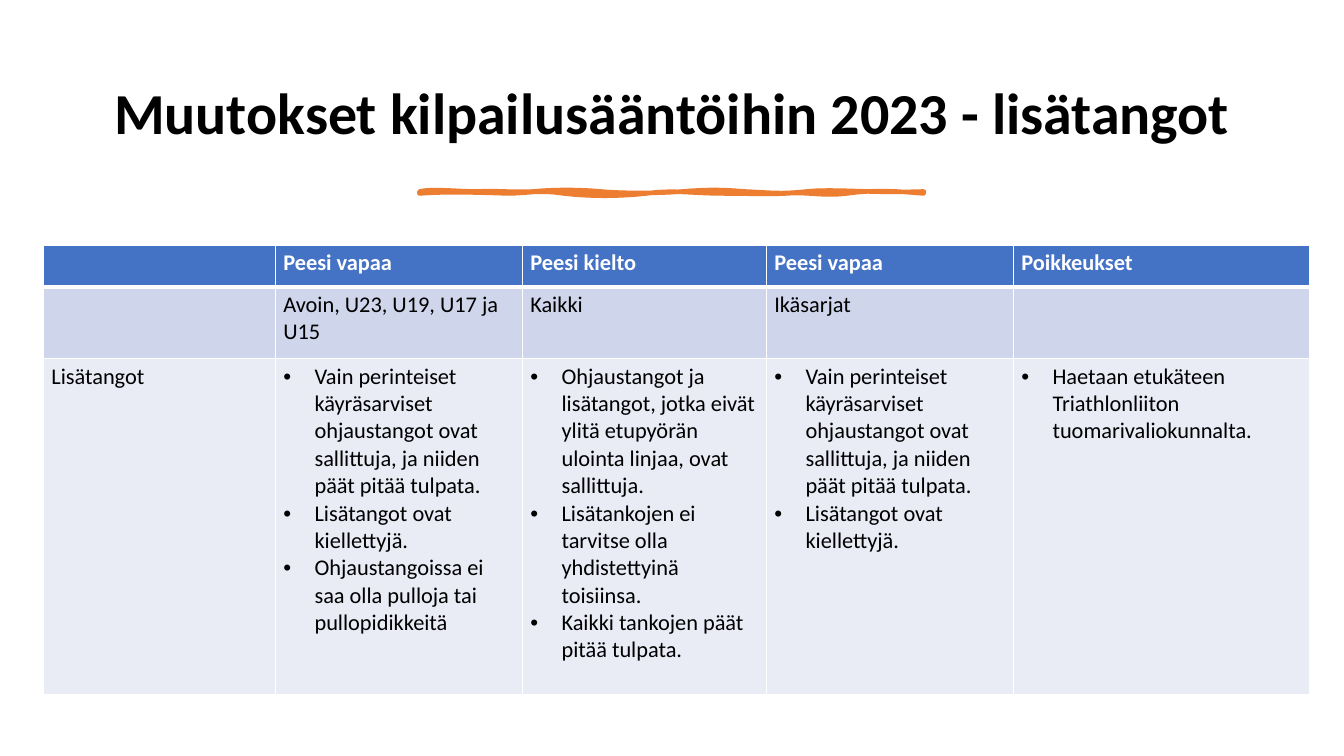
from lxml import etree
from pptx import Presentation
from pptx.dml.color import RGBColor
from pptx.enum import text
from pptx.oxml import ns
from pptx.util import Inches, Pt

COLORS = {
    "black": "000000", "white": "FFFFFF", "orange": "ED7D31",
    "header": "4472C4", "band": "CFD5EA", "body": "E9EBF5",
}
FONT = "Calibri"
COLUMNS = [2.3, 2.45, 2.42, 2.45, 2.94]
ROWS = [("header", 0.42), ("band", 0.71), ("body", 3.33)]

HANDLEBARS = ("Vain perinteiset käyräsarviset ohjaustangot ovat sallittuja, "
              "ja niiden päät pitää tulpata.")
FORBIDDEN = "Lisätangot ovat kiellettyjä."
CELLS = [
    ["", "Peesi vapaa", "Peesi kielto", "Peesi vapaa", "Poikkeukset"],
    ["", "Avoin, U23, U19, U17 ja U15", "Kaikki", "Ikäsarjat", ""],
    [
        "Lisätangot",
        [HANDLEBARS, FORBIDDEN,
         "Ohjaustangoissa ei saa olla pulloja tai pullopidikkeitä"],
        ["Ohjaustangot ja lisätangot, jotka eivät ylitä etupyörän "
         "ulointa linjaa, ovat sallittuja.",
         "Lisätankojen ei tarvitse olla yhdistettyinä toisiinsa.",
         "Kaikki tankojen päät pitää tulpata."],
        [HANDLEBARS, FORBIDDEN],
        ["Haetaan etukäteen Triathlonliiton tuomarivaliokunnalta."],
    ],
]

BRUSH_START = (4.16, 1.9)
BRUSH_CURVES = [
    ((4.28, 1.87), (4.54, 1.9), (4.73, 1.9)),
    ((4.92, 1.89), (5.09, 1.91), (5.29, 1.9)),
    ((5.49, 1.88), (5.74, 1.88), (5.96, 1.9)),
    ((6.17, 1.92), (6.53, 1.92), (6.77, 1.9)),
    ((7.02, 1.88), (7.14, 1.88), (7.39, 1.9)),
    ((7.63, 1.91), (7.74, 1.93), (8, 1.9)),
    ((8.26, 1.87), (8.67, 1.92), (9.16, 1.9)),
    ((9.17, 1.91), (9.16, 1.91), (9.16, 1.92)),
    ((8.95, 1.9), (8.65, 1.88), (8.4, 1.92)),
    ((8.15, 1.95), (8.01, 1.9), (7.79, 1.92)),
    ((7.56, 1.93), (7.47, 1.92), (7.17, 1.92)),
    ((6.87, 1.92), (6.67, 1.88), (6.41, 1.92)),
    ((6.14, 1.95), (5.85, 1.95), (5.59, 1.92)),
    ((5.34, 1.88), (5.23, 1.92), (5.03, 1.92)),
    ((4.83, 1.91), (4.38, 1.9), (4.16, 1.92)),
]


def rgb(name):
    return RGBColor.from_string(COLORS[name])


def set_font(p, size, color, bold=False):
    p.font.name = FONT
    p.font.size = Pt(size)
    p.font.bold = bold
    p.font.color.rgb = rgb(color)


def add_title(s, title):
    sp = s.shapes.add_textbox(Inches(0.7), Inches(0.46), Inches(11.93), Inches(1.37))
    tf = sp.text_frame
    tf.word_wrap = True
    tf.vertical_anchor = text.MSO_ANCHOR.MIDDLE
    p = tf.paragraphs[0]
    p.text = title
    p.alignment = text.PP_ALIGN.CENTER
    p.line_spacing = 0.9
    set_font(p, 41.4, "black", True)


def curve_points(start, curves, steps=8):
    points = []
    for a, b, end in curves:
        for i in range(1, steps + 1):
            t = i / steps
            weights = ((1 - t) ** 3, 3 * t * (1 - t) ** 2, 3 * t * t * (1 - t), t ** 3)
            corners = (start, a, b, end)
            points.append(tuple(
                Inches(sum(w * c[axis] for w, c in zip(weights, corners)))
                for axis in (0, 1)))
        start = end
    return points


def add_brush_stroke(s):
    x, y = BRUSH_START
    builder = s.shapes.build_freeform(Inches(x), Inches(y))
    builder.add_line_segments(curve_points(BRUSH_START, BRUSH_CURVES), close=True)
    sp = builder.convert_to_shape()
    sp.shadow.inherit = False
    sp.fill.solid()
    sp.fill.fore_color.rgb = rgb("orange")
    sp.line.color.rgb = rgb("orange")
    sp.line.width = Pt(3.25)


def set_borders(cell, widths):
    tc_pr = cell._tc.get_or_add_tcPr()
    for i, (side, width) in enumerate(widths.items()):
        ln = etree.Element(ns.qn(f"a:ln{side}"), w=str(Pt(width)))
        fill = etree.SubElement(ln, ns.qn("a:solidFill"))
        etree.SubElement(fill, ns.qn("a:srgbClr"), val=COLORS["white"])
        tc_pr.insert(i, ln)


def add_bullet(p):
    p_pr = p._p.get_or_add_pPr()
    p_pr.set("marL", str(Inches(0.31)))
    p_pr.set("indent", str(-Inches(0.31)))
    font = etree.Element(ns.qn("a:buFont"), typeface="Arial")
    char = etree.Element(ns.qn("a:buChar"), char="•")
    p_pr.insert(0, font)
    p_pr.insert(1, char)


def fill_cell(cell, content, kind):
    header = kind == "header"
    cell.fill.solid()
    cell.fill.fore_color.rgb = rgb(kind)
    cell.margin_left = cell.margin_right = Inches(0.08)
    cell.margin_top = cell.margin_bottom = Inches(0.04)
    set_borders(cell, {"L": 1, "R": 1, "T": 3 if kind == "band" else 1,
                       "B": 3 if header else 1})
    bulleted = isinstance(content, list)
    cell.text_frame.text = "\n".join(content) if bulleted else content
    for p in cell.text_frame.paragraphs:
        set_font(p, 16, "white" if header else "black", header)
        if bulleted:
            add_bullet(p)


def add_rules_table(s):
    frame = s.shapes.add_table(
        len(ROWS), len(COLUMNS), Inches(0.43), Inches(2.43),
        Inches(sum(COLUMNS)), Inches(sum(height for _, height in ROWS)))
    table = frame.table
    for column, width in zip(table.columns, COLUMNS):
        column.width = Inches(width)
    for row, (kind, height), contents in zip(table.rows, ROWS, CELLS):
        row.height = Inches(height)
        for cell, content in zip(row.cells, contents):
            fill_cell(cell, content, kind)


def main():
    prs = Presentation()
    prs.slide_width, prs.slide_height = Inches(13.33), Inches(7.5)
    s = prs.slides.add_slide(prs.slide_layouts[6])
    add_title(s, "Muutokset kilpailusääntöihin 2023 - lisätangot")
    add_brush_stroke(s)
    add_rules_table(s)
    prs.save("out.pptx")


if __name__ == "__main__":
    main()
